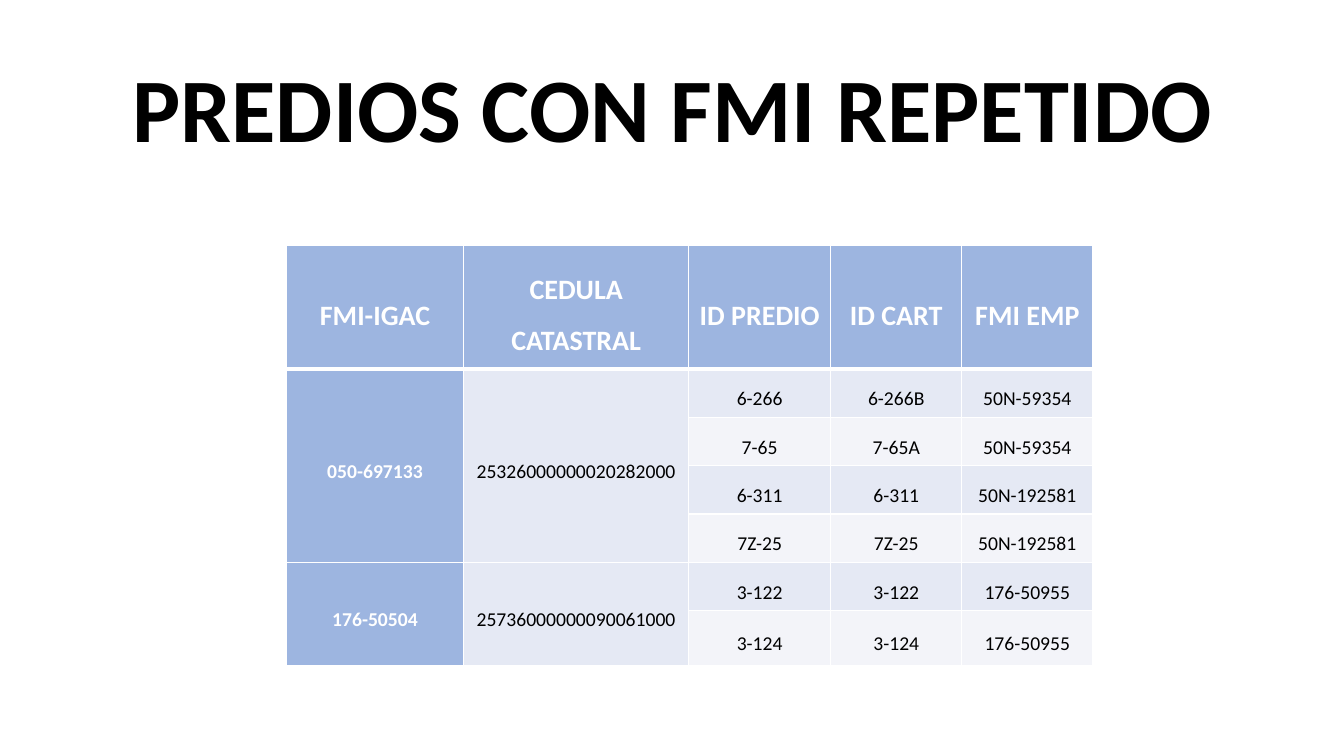
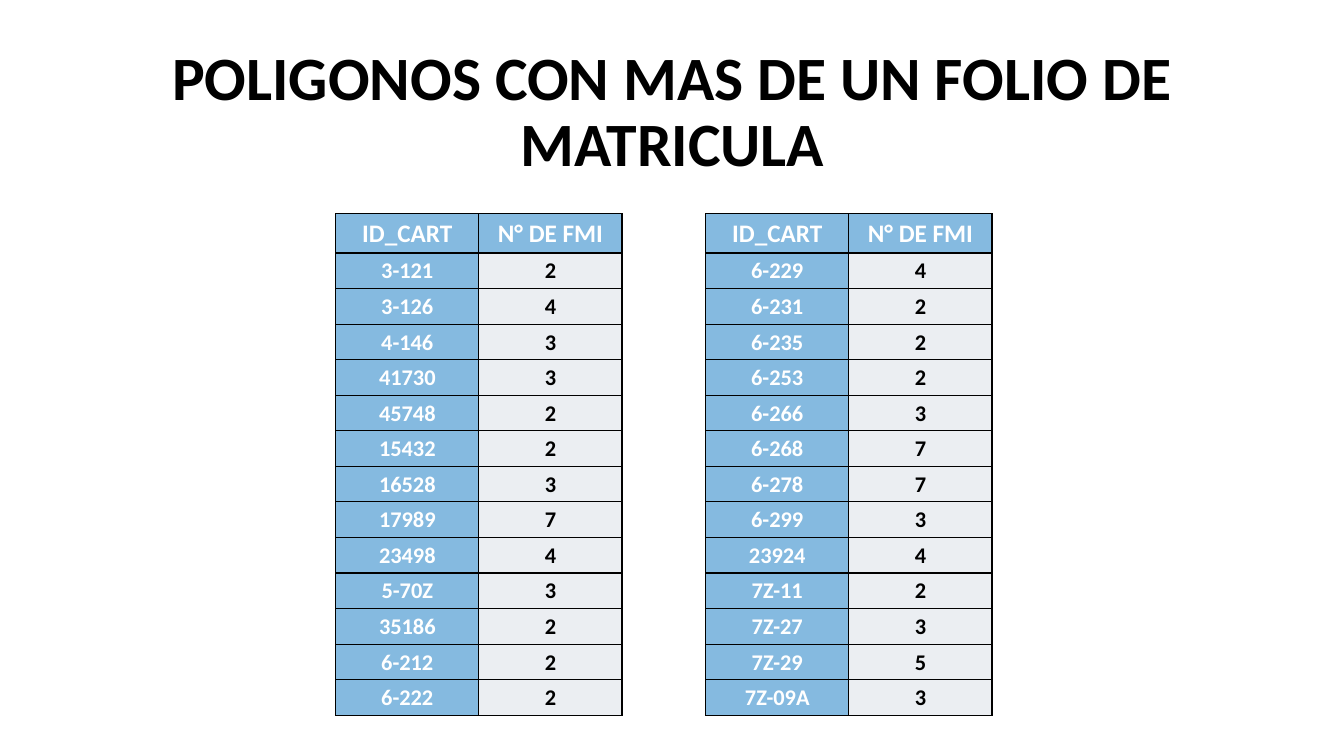
import pptx
import pptx.dml.color
import pptx.enum.text
import pptx.oxml.ns
import pptx.util
from lxml import etree

Inches, Pt = pptx.util.Inches, pptx.util.Pt
RGBColor = pptx.dml.color.RGBColor
MSO_ANCHOR = pptx.enum.text.MSO_ANCHOR
PP_ALIGN = pptx.enum.text.PP_ALIGN
qn = pptx.oxml.ns.qn

FONT = "Calibri"
BLACK = RGBColor(0x00, 0x00, 0x00)
WHITE = RGBColor(0xFF, 0xFF, 0xFF)
INDIGO = RGBColor(0x44, 0x72, 0xC4)
BAND_DARK = RGBColor(0xCF, 0xD5, 0xEA)
BAND_LIGHT = RGBColor(0xE9, 0xEB, 0xF5)
BLUE = RGBColor(0x00, 0x70, 0xC0)
GREY = RGBColor(0xD6, 0xDC, 0xE5)

FMI_HEADER = ["FMI-IGAC", "CEDULA CATASTRAL", "ID PREDIO", "ID CART", "FMI EMP"]
FMI_GROUPS = [
    ("050-697133", "25326000000020282000", [
        ("6-266", "6-266B", "50N-59354"),
        ("7-65", "7-65A", "50N-59354"),
        ("6-311", "6-311", "50N-192581"),
        ("7Z-25", "7Z-25", "50N-192581"),
    ]),
    ("176-50504", "25736000000090061000", [
        ("3-122", "3-122", "176-50955"),
        ("3-124", "3-124", "176-50955"),
    ]),
]
POLYGON_HEADER = ("ID_CART", "N° DE FMI")
POLYGONS_LEFT = [
    ("3-121", 2), ("3-126", 4), ("4-146", 3), ("41730", 3), ("45748", 2),
    ("15432", 2), ("16528", 3), ("17989", 7), ("23498", 4), ("5-70Z", 3),
    ("35186", 2), ("6-212", 2), ("6-222", 2),
]
POLYGONS_RIGHT = [
    ("6-229", 4), ("6-231", 2), ("6-235", 2), ("6-253", 2), ("6-266", 3),
    ("6-268", 7), ("6-278", 7), ("6-299", 3), ("23924", 4), ("7Z-11", 2),
    ("7Z-27", 3), ("7Z-29", 5), ("7Z-09A", 3),
]


def set_font(p, size, color, bold):
    p.font.name, p.font.size, p.font.bold = FONT, Pt(size), bold
    p.font.color.rgb = color


def add_titled_slide(prs, title, size):
    s = prs.slides.add_slide(prs.slide_layouts[5])
    sp = s.shapes.title
    sp.left, sp.top = Inches(0.92), Inches(0.4)
    sp.width, sp.height = Inches(11.5), Inches(1.45)
    tf = sp.text_frame
    tf.text = title
    tf.word_wrap = True
    tf.auto_size = pptx.enum.text.MSO_AUTO_SIZE.NONE
    tf.vertical_anchor = MSO_ANCHOR.MIDDLE
    p = tf.paragraphs[0]
    p.alignment, p.line_spacing = PP_ALIGN.CENTER, 0.9
    set_font(p, size, BLACK, True)
    return s


def add_plain_table(s, left, top, widths, heights):
    """Add a table without banding, sized by its columns and rows."""
    table = s.shapes.add_table(
        len(heights), len(widths), Inches(left), Inches(top),
        Inches(sum(widths)), Inches(sum(heights))).table
    table.first_row = table.horz_banding = False
    for column, width in zip(table.columns, widths):
        column.width = Inches(width)
    for row, height in zip(table.rows, heights):
        row.height = Inches(height)
    return table


def set_borders(cell, color, left=1, right=1, top=1, bottom=1):
    """Draw the cell borders, in points; 0 leaves a side without a line."""
    tcPr = cell._tc.get_or_add_tcPr()
    for side, width in zip("LRTB", (left, right, top, bottom)):
        ln = etree.SubElement(tcPr, qn(f"a:ln{side}"), w=str(Pt(width)))
        if width:
            fill = etree.SubElement(ln, qn("a:solidFill"))
            etree.SubElement(fill, qn("a:srgbClr"), val=str(color))
        else:
            etree.SubElement(ln, qn("a:noFill"))


def set_fill(cell, color, opacity):
    cell.fill.solid()
    cell.fill.fore_color.rgb = color
    clr = cell._tc.tcPr.find(qn("a:solidFill"))[0]
    etree.SubElement(clr, qn("a:alpha"), val=str(opacity * 1000))


def set_margins(cell, side, top):
    cell.margin_left = cell.margin_right = Inches(side)
    cell.margin_top, cell.margin_bottom = Inches(top), 0


def set_text(cell, text, size, color, bold):
    cell.text = str(text)
    cell.vertical_anchor = MSO_ANCHOR.MIDDLE
    p = cell.text_frame.paragraphs[0]
    p.alignment = PP_ALIGN.CENTER
    set_font(p, size, color, bold)
    return p


def add_repeated_fmi_table(s):
    rows = [FMI_HEADER]
    merges = []
    for fmi, cedula, parcels in FMI_GROUPS:
        merges.append((len(rows), len(rows) + len(parcels) - 1))
        for i, parcel in enumerate(parcels):
            rows.append([*(("", "") if i else (fmi, cedula)), *parcel])

    table = add_plain_table(s, 2.84, 2.43, [1.76, 2.23, 1.41, 1.3, 1.3],
                            [1.23] + [0.48] * 5 + [0.54])
    for r, row in enumerate(rows):
        for c, text in enumerate(row):
            cell = table.cell(r, c)
            heading = r == 0 or c == 0
            band = BAND_DARK if r % 2 or c == 1 else BAND_LIGHT
            set_borders(cell, WHITE, top=3 if r == 1 else 1,
                        bottom=3 if r == 0 else 1)
            set_fill(cell, INDIGO if heading else band, 52)
            set_margins(cell, 0.05, 0)
            if text:
                p = set_text(cell, text, 14 if r else 20,
                             WHITE if heading else BLACK, heading)
                p.line_spacing, p.space_after = 1.5, Pt(8)
    for first, last in merges:
        for c in (0, 1):
            table.cell(first, c).merge(table.cell(last, c))


def add_polygon_table(s):
    """Two lists side by side in one table, with an open column between."""
    rows = [(*POLYGON_HEADER, None, *POLYGON_HEADER)]
    rows += [(*a, None, *b) for a, b in zip(POLYGONS_LEFT, POLYGONS_RIGHT)]

    count = len(POLYGONS_LEFT)
    table = add_plain_table(s, 3.33, 2.12, [1.42, 1.42, 0.83, 1.42, 1.42],
                            [0.39] + [4.59 / count] * count)
    for r, row in enumerate(rows):
        for c, value in enumerate(row):
            cell = table.cell(r, c)
            set_margins(cell, 0.01, 0.01)
            if value is None:
                set_borders(cell, BLACK, top=0, bottom=0)
                cell.fill.background()
                set_font(cell.text_frame.paragraphs[0], 16, BLACK, False)
                continue
            heading = r == 0 or c in (0, 3)
            set_borders(cell, BLACK)
            set_fill(cell, BLUE if heading else GREY, 48)
            set_text(cell, value, 16 if r else 18,
                     WHITE if heading else BLACK, True)


def main():
    prs = pptx.Presentation()
    prs.slide_width, prs.slide_height = Inches(13.33), Inches(7.5)
    add_repeated_fmi_table(
        add_titled_slide(prs, "PREDIOS CON FMI REPETIDO", 64.8))
    add_polygon_table(
        add_titled_slide(prs, "POLIGONOS CON MAS DE UN FOLIO DE MATRICULA", 44))
    prs.save("out.pptx")


if __name__ == "__main__":
    main()
